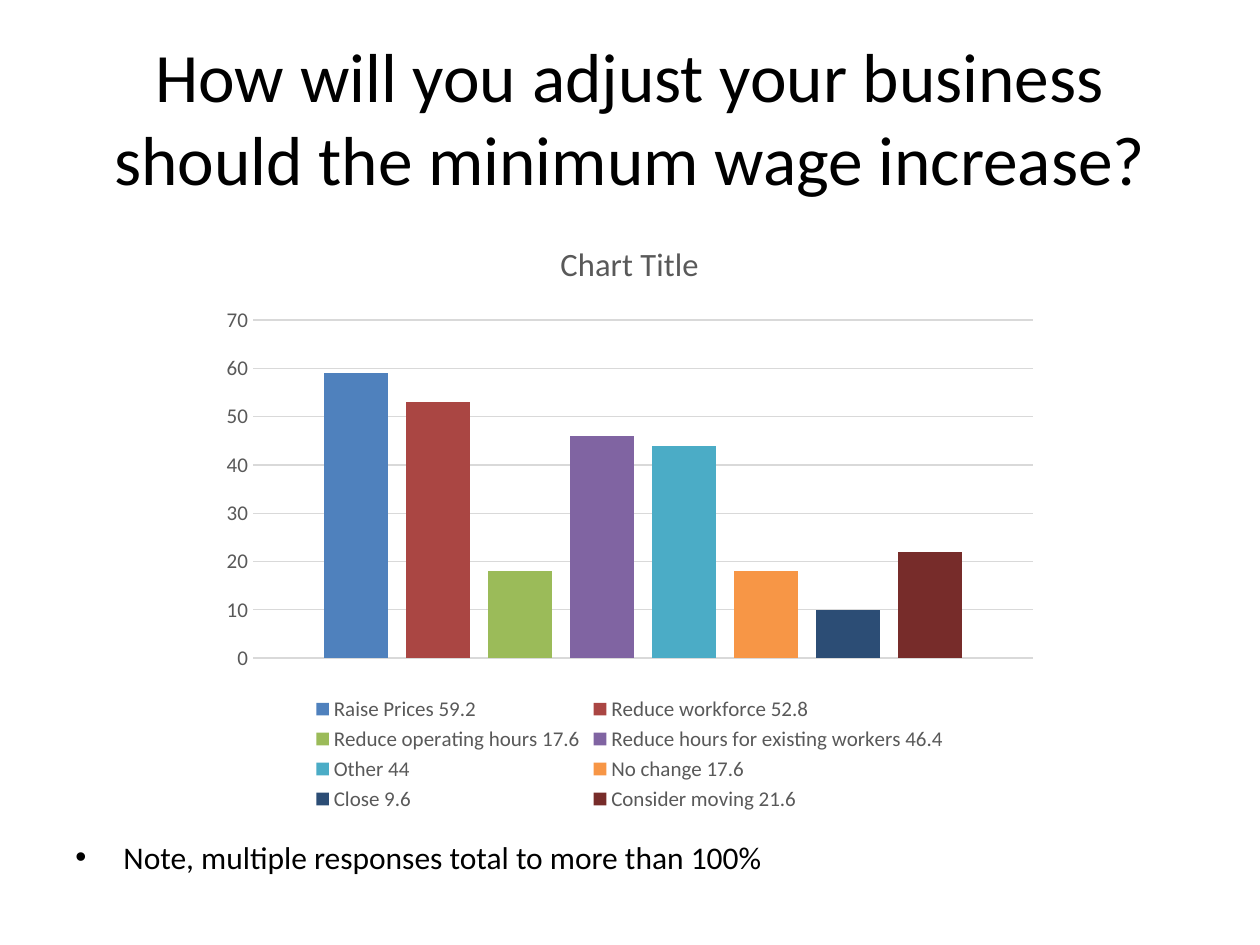
import pptx
import pptx.util
import pptx.chart.data
import pptx.dml.color
import pptx.enum.chart
import pptx.enum.text
import pptx.oxml
import pptx.oxml.ns

Cm = pptx.util.Cm
Pt = pptx.util.Pt
FACE = "Calibri"
HUES = {"ink": "000000", "grey": "595959", "grid": "D9D9D9"}
BARS = {
    "Raise Prices": (59.2, "4F81BD"),
    "Reduce workforce": (52.8, "AA4643"),
    "Reduce operating hours": (17.6, "9BBB59"),
    "Reduce hours for existing workers": (46.4, "8064A2"),
    "Other": (44, "4BACC6"),
    "No change": (17.6, "F79646"),
    "Close": (9.6, "2C4D75"),
    "Consider moving": (21.6, "772C2A"),
}


def style(font, size, hue):
    font.name = FACE
    font.size = Pt(size)
    font.bold = False
    font.color.rgb = pptx.dml.color.RGBColor.from_string(HUES[hue])


def write(top, height, text, size):
    box = slide.shapes.add_textbox(Cm(1.27), Cm(top), Cm(22.86), Cm(height))
    box.text_frame.word_wrap = True
    para = box.text_frame.paragraphs[0]
    run = para.add_run()
    run.text = text
    style(run.font, size, "ink")
    return box.text_frame, para


deck = pptx.Presentation()
deck.slide_width, deck.slide_height = Cm(25.4), Cm(19.05)
slide = deck.slides.add_slide(deck.slide_layouts[6])

# Title
frame, para = write(
    0.76, 3.18,
    "How will you adjust your business should the minimum wage increase?", 39.6)
frame.vertical_anchor = pptx.enum.text.MSO_ANCHOR.MIDDLE
para.alignment = pptx.enum.text.PP_ALIGN.CENTER

# Bulleted note
frame, para = write(
    16.76, 1.37, "Note, multiple responses total to more than 100%", 18)
para.space_before = Pt(3.6)
props = para._p.get_or_add_pPr()
props.set("marL", str(Cm(0.97)))
props.set("indent", str(-Cm(0.97)))
for tag, key, value in (("a:buFont", "typeface", "Arial"),
                        ("a:buChar", "char", "•")):
    mark = pptx.oxml.parse_xml(
        f'<{tag} {pptx.oxml.ns.nsdecls("a")} {key}="{value}"/>')
    props.append(mark)

# Chart data: one series per answer, drawn in whole percents
data = pptx.chart.data.CategoryChartData()
data.categories = ["1"]
for name, (share, hue) in BARS.items():
    data.add_series(f"{name} {share}", [round(share)])
chart = slide.shapes.add_chart(
    pptx.enum.chart.XL_CHART_TYPE.COLUMN_CLUSTERED,
    Cm(4.23), Cm(4.37), Cm(16.93), Cm(12.09), data).chart
style(chart.font, 10, "ink")

# Chart title and legend
chart.has_title = True
run = chart.chart_title.text_frame.paragraphs[0].add_run()
run.text = "Chart Title"
style(run.font, 18.6, "grey")
chart.chart_title.include_in_layout = False
chart.has_legend = True
chart.legend.position = pptx.enum.chart.XL_LEGEND_POSITION.BOTTOM
chart.legend.include_in_layout = False
style(chart.legend.font, 12, "grey")

# Axes
chart.category_axis.visible = False
axis = chart.value_axis
axis.major_tick_mark = pptx.enum.chart.XL_TICK_MARK.NONE
axis.minor_tick_mark = pptx.enum.chart.XL_TICK_MARK.NONE
axis.tick_labels.number_format = "General"
axis.tick_labels.number_format_is_linked = False
style(axis.tick_labels.font, 12, "grey")
axis.format.line.fill.background()
line = axis.major_gridlines.format.line
line.width = Pt(0.75)
line.color.rgb = pptx.dml.color.RGBColor.from_string(HUES["grid"])

# Columns
plot = chart.plots[0]
plot.vary_by_categories = False
plot.gap_width = 219
plot.overlap = -27
for bar, (share, hue) in zip(plot.series, BARS.values()):
    bar.format.fill.solid()
    bar.format.fill.fore_color.rgb = pptx.dml.color.RGBColor.from_string(hue)

deck.save("out.pptx")
